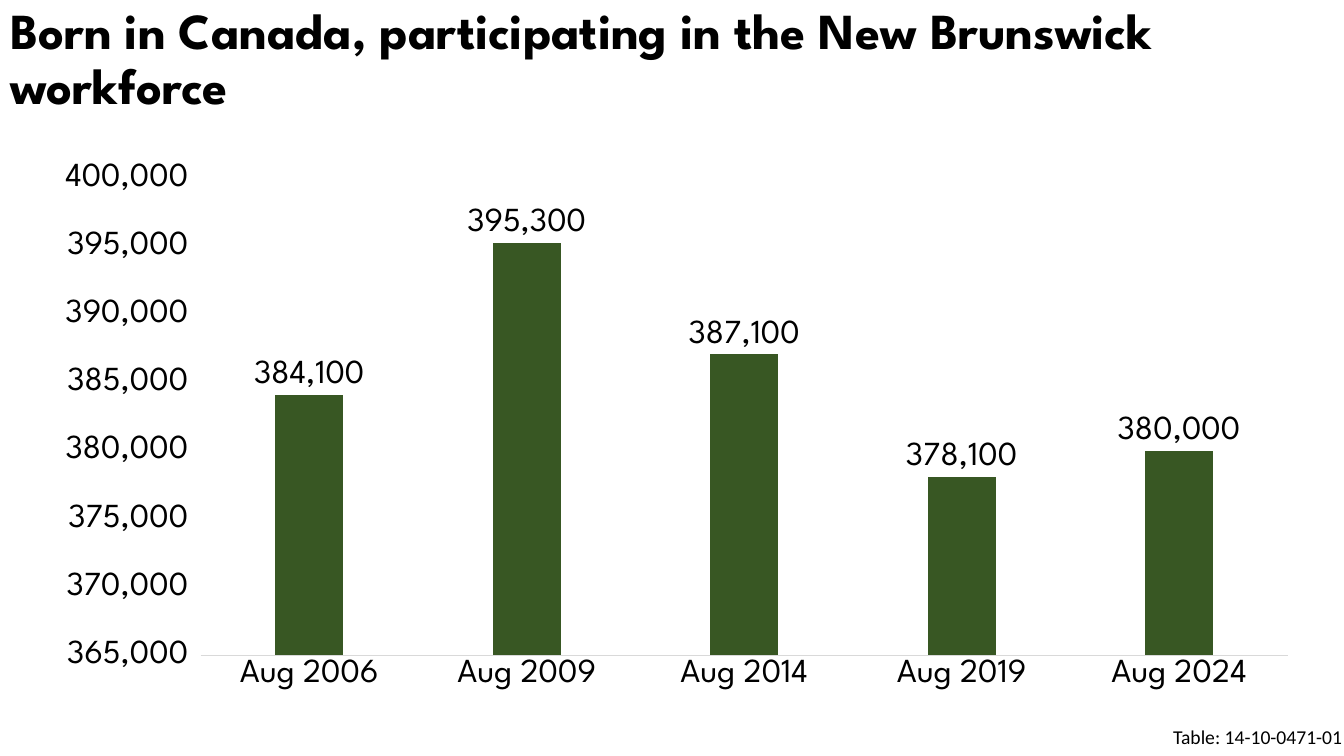
from lxml import etree
from pptx import Presentation
from pptx import util as u
from pptx.chart.data import CategoryChartData
from pptx.dml.color import RGBColor
from pptx.enum import chart as charts
from pptx.enum import text
from pptx.oxml import parse_xml
from pptx.oxml.ns import nsdecls

COLOURS = {"text": "000000", "bar": "385723", "axis": "D9D9D9", "border": "FFFFFF"}
NUMBER_FORMAT = '_(* #,##0_);_(* \\(#,##0\\);_(* "-"??_);_('
WORKFORCE = {
    "Aug 2006": 384100,
    "Aug 2009": 395300,
    "Aug 2014": 387100,
    "Aug 2019": 378100,
    "Aug 2024": 380000,
}


class SlideBuilder:
    """Hold the style and the current slide, and add each kind of element."""

    def __init__(self, presentation):
        self.slide = presentation.slides.add_slide(presentation.slide_layouts[5])
        self.heading_font = "League Spartan"
        self.note_font = "Calibri"

    def colour(self, name):
        return RGBColor.from_string(COLOURS[name])

    def style_font(self, font, name, size, bold=False):
        font.name = name
        font.size = u.Pt(size)
        font.bold = bold
        font.color.rgb = self.colour("text")

    def box(self, left, top, width, height):
        return [u.Cm(length) for length in (left, top, width, height)]

    def add_title(self, words, *place):
        title = self.slide.shapes.title
        title.left, title.top, title.width, title.height = self.box(*place)
        frame = title.text_frame
        frame.word_wrap = True
        frame.auto_size = text.MSO_AUTO_SIZE.NONE
        frame.vertical_anchor = text.MSO_ANCHOR.MIDDLE
        paragraph = frame.paragraphs[0]
        paragraph.alignment = text.PP_ALIGN.LEFT
        paragraph.line_spacing = 0.9
        run = paragraph.add_run()
        run.text = words
        self.style_font(run.font, self.heading_font, 36, True)

    def add_column_chart(self, values, *place):
        data = CategoryChartData(number_format=NUMBER_FORMAT)
        data.categories = list(values)
        data.add_series("Series 1", list(values.values()))
        chart = self.slide.shapes.add_chart(
            charts.XL_CHART_TYPE.COLUMN_CLUSTERED, *self.box(*place), data
        ).chart
        chart.has_title = False
        chart.has_legend = False
        self.style_font(chart.font, self.heading_font, 24)
        for axis in (chart.category_axis, chart.value_axis):
            axis.has_major_gridlines = False
            axis.major_tick_mark = charts.XL_TICK_MARK.NONE
            axis.minor_tick_mark = charts.XL_TICK_MARK.NONE
            self.style_font(axis.tick_labels.font, self.heading_font, 24)
        category_line = chart.category_axis.format.line
        category_line.color.rgb = self.colour("axis")
        category_line.width = u.Pt(0.75)
        value_axis = chart.value_axis
        value_axis.format.line.fill.background()
        value_axis.minimum_scale = 365000
        value_axis.maximum_scale = 400000
        value_axis.major_unit = 5000
        value_axis.tick_labels.number_format = NUMBER_FORMAT
        value_axis.tick_labels.number_format_is_linked = False
        plot = chart.plots[0]
        plot.gap_width = 219
        plot.overlap = -27
        plot.vary_by_categories = False
        series = plot.series[0]
        series.format.fill.solid()
        series.format.fill.fore_color.rgb = self.colour("bar")
        labels = series.data_labels
        labels.show_value = True
        labels.position = charts.XL_LABEL_POSITION.OUTSIDE_END
        labels.number_format = NUMBER_FORMAT
        labels.number_format_is_linked = False
        self.style_font(labels.font, self.heading_font, 24)

    def add_borders(self, cell):
        properties = cell._tc.get_or_add_tcPr()
        for position, side in enumerate(("lnL", "lnR", "lnT", "lnB")):
            border = parse_xml(f'<a:{side} {nsdecls("a")} w="12700"/>')
            fill = etree.SubElement(border, border.tag.replace(side, "solidFill"))
            colour = etree.SubElement(fill, border.tag.replace(side, "srgbClr"))
            colour.set("val", COLOURS["border"])
            properties.insert(position, border)

    def add_source_table(self, words, *place):
        table = self.slide.shapes.add_table(1, 1, *self.box(*place)).table
        table.first_row = False
        table.horz_banding = False
        cell = table.cell(0, 0)
        cell.fill.background()
        cell.vertical_anchor = text.MSO_ANCHOR.BOTTOM
        cell.margin_left = cell.margin_right = cell.margin_top = u.Cm(0.03)
        cell.margin_bottom = 0
        paragraph = cell.text_frame.paragraphs[0]
        paragraph.alignment = text.PP_ALIGN.RIGHT
        run = paragraph.add_run()
        run.text = words
        self.style_font(run.font, self.note_font, 14)
        self.add_borders(cell)


def main():
    presentation = Presentation()
    presentation.slide_width = u.Cm(33.87)
    presentation.slide_height = u.Cm(19.05)
    builder = SlideBuilder(presentation)
    builder.add_title(
        "Born in Canada, participating in the New Brunswick workforce",
        0, 0.13, 33.53, 2.79,
    )
    builder.add_source_table("Table: 14-10-0471-01", 15.34, 17.65, 18.52, 1.24)
    builder.add_column_chart(WORKFORCE, 0.79, 3.84, 32.31, 13.82)
    presentation.save("out.pptx")


if __name__ == "__main__":
    main()
